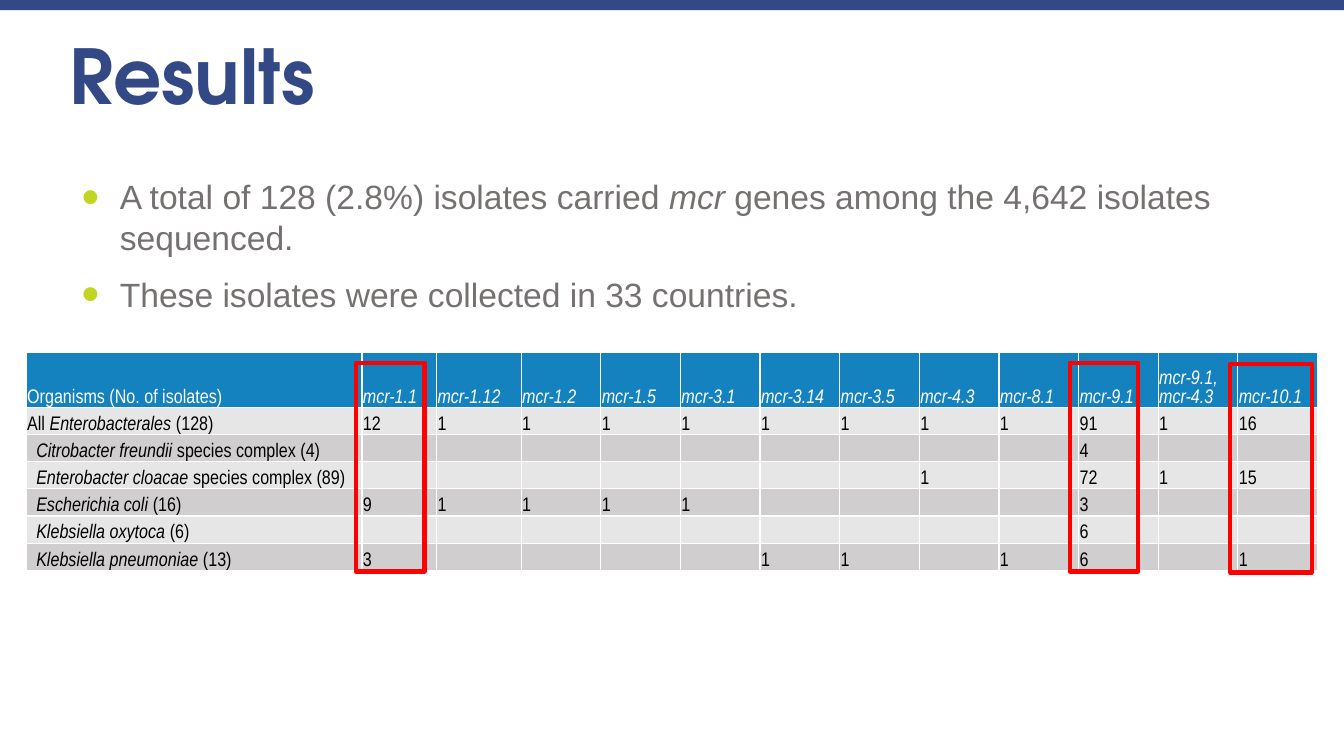
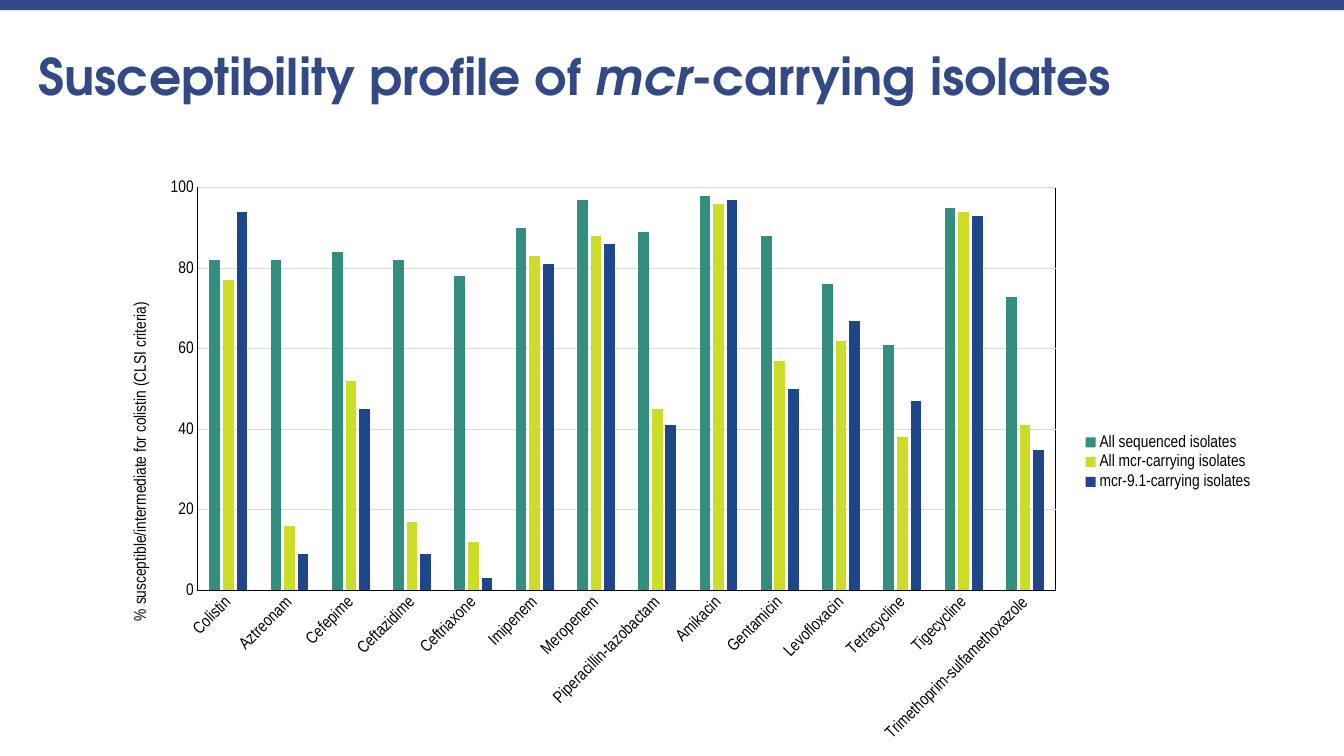
from lxml import etree
from pptx import Presentation
from pptx.chart.data import CategoryChartData
from pptx.dml.color import RGBColor
from pptx.enum.chart import XL_CHART_TYPE, XL_LEGEND_POSITION, XL_TICK_MARK
from pptx.enum.shapes import MSO_SHAPE
from pptx.enum.text import MSO_ANCHOR
from pptx.oxml import parse_xml
from pptx.oxml.ns import nsdecls, qn
from pptx.util import Inches, Pt

RECT = MSO_SHAPE.RECTANGLE
BOTTOM = MSO_ANCHOR.BOTTOM
COLUMN = XL_CHART_TYPE.COLUMN_CLUSTERED
RIGHT = XL_LEGEND_POSITION.RIGHT
NO_TICK = XL_TICK_MARK.NONE

NAVY = RGBColor(0x32, 0x49, 0x86)
BLUE = RGBColor(0x14, 0x82, 0xBE)
WHITE = RGBColor(0xFF, 0xFF, 0xFF)
BLACK = RGBColor(0, 0, 0)
GRAY = RGBColor(0x76, 0x71, 0x71)
LIGHT = RGBColor(0xE7, 0xE6, 0xE6)
DARK = RGBColor(0xD0, 0xCE, 0xCE)
GRID = RGBColor(0xD9, 0xD9, 0xD9)
RED = RGBColor(0xFF, 0, 0)
LIME = RGBColor(0xC1, 0xD6, 0x20)
TEAL = RGBColor(0x34, 0x8E, 0x7D)
YELLOW = RGBColor(0xCD, 0xDD, 0x27)
ROYAL = RGBColor(0x1D, 0x47, 0x89)

HEAD = {"name": "TeX Gyre Adventor", "bold": True, "rgb": NAVY}
BODY = {"name": "Arial", "size": Pt(24), "rgb": GRAY}
CELL = {"name": "Arial Narrow", "size": Pt(14)}
LABEL = {"name": "Arial Narrow", "size": Pt(12), "bold": False, "rgb": BLACK}

POINTS = [
    "A total of 128 (2.8%) isolates carried *mcr* genes among the 4,642 isolates sequenced.",
    "These isolates were collected in 33 countries.",
]
WIDTHS = [3.33, 0.74, 0.84] + [0.79] * 10
GENES = ["1.1", "1.12", "1.2", "1.5", "3.1", "3.14", "3.5", "4.3", "8.1", "9.1",
         "9.1, mcr-4.3", "10.1"]
COUNTS = [
    ("All *Enterobacterales* (128)", "12 1 1 1 1 1 1 1 1 91 1 16"),
    ("*Citrobacter freundii* species complex (4)", "- - - - - - - - - 4 - -"),
    ("*Enterobacter cloacae* species complex (89)", "- - - - - - - 1 - 72 1 15"),
    ("*Escherichia coli* (16)", "9 1 1 1 1 - - - - 3 - -"),
    ("*Klebsiella oxytoca* (6)", "- - - - - - - - - 6 - -"),
    ("*Klebsiella pneumoniae* (13)", "3 - - - - 1 1 - 1 6 - 1"),
]
MARKS = [(3.53, 3.6, 0.68), (10.61, 3.6, 0.68), (12.2, 3.61, 0.81)]
DRUGS = ["Colistin", "Aztreonam", "Cefepime", "Ceftazidime", "Ceftriaxone", "Imipenem",
         "Meropenem", "Piperacillin-tazobactam", "Amikacin", "Gentamicin", "Levofloxacin",
         "Tetracycline", "Tigecycline", "Trimethoprim-sulfamethoxazole"]
SERIES = [
    ("All sequenced isolates", TEAL,
     [82, 82, 84, 82, 78, 90, 97, 89, 98, 88, 76, 61, 95, 73]),
    ("All mcr-carrying isolates", YELLOW,
     [77, 16, 52, 17, 12, 83, 88, 45, 96, 57, 62, 38, 94, 41]),
    ("mcr-9.1-carrying isolates", ROYAL,
     [94, 9, 45, 9, 3, 81, 86, 41, 97, 50, 67, 47, 93, 35]),
]


def style(item, form):
    """Set each format value on a font or other object."""
    for key, value in form.items():
        if key == "rgb":
            item.color.rgb = value
        else:
            setattr(item, key, value)


def inch(*box):
    """Turn numbers into lengths."""
    return [Inches(n) for n in box]


def write(para, text, form):
    """Add runs, with the parts between asterisks in italics."""
    for i, part in enumerate(text.split("*")):
        if part:
            run = para.add_run()
            run.text = part
            style(run.font, {**form, "italic": i % 2 == 1})


def add_rect(slide, box, fill=None, line=None):
    """Add a plain rectangle with a fill or an outline."""
    rect = slide.shapes.add_shape(RECT, *inch(*box))
    rect.shadow.inherit = False
    if fill is None:
        rect.fill.background()
    else:
        rect.fill.solid()
        rect.fill.fore_color.rgb = fill
    if line is None:
        rect.line.fill.background()
    else:
        style(rect.line, {"rgb": line, "width": Pt(3)})


def add_page(deck, title, box, size, wrap=True):
    """Add a slide with the top band and its title."""
    slide = deck.slides.add_slide(deck.slide_layouts[6])
    add_rect(slide, (0, 0, 13.33, 0.1), fill=NAVY)
    frame = slide.shapes.add_textbox(*inch(*box)).text_frame
    frame.word_wrap = wrap
    write(frame.paragraphs[0], title, {**HEAD, "size": Pt(size)})
    return slide


def add_points(slide, box):
    """Add the bulleted list."""
    frame = slide.shapes.add_textbox(*inch(*box)).text_frame
    frame.word_wrap = True
    for i, text in enumerate(POINTS):
        para = frame.add_paragraph() if i else frame.paragraphs[0]
        style(para, {"space_before": Pt(6), "space_after": Pt(6)})
        props = para._p.get_or_add_pPr()
        props.set("marL", str(Inches(0.5)))
        props.set("indent", str(Inches(-0.38)))
        tint = etree.SubElement(props, qn("a:buClr"))
        etree.SubElement(tint, qn("a:srgbClr"), val=str(LIME))
        etree.SubElement(props, qn("a:buSzPct"), val="151000")
        etree.SubElement(props, qn("a:buFont"), typeface="Arial")
        etree.SubElement(props, qn("a:buChar"), char="•")
        write(para, text, BODY)


def fill_cell(cell, text, fill, tone, inset=0.01):
    """Write one table cell with white borders."""
    style(cell, {"margin_left": Inches(inset), "margin_right": Inches(0.01),
                 "margin_top": Inches(0.01), "margin_bottom": 0,
                 "vertical_anchor": BOTTOM})
    props = cell._tc.get_or_add_tcPr()
    for side in ("lnL", "lnR", "lnT", "lnB"):
        edge = etree.SubElement(props, qn("a:" + side), w=str(Pt(1)))
        paint = etree.SubElement(edge, qn("a:solidFill"))
        etree.SubElement(paint, qn("a:srgbClr"), val=str(WHITE))
    cell.fill.solid()
    cell.fill.fore_color.rgb = fill
    para = cell.text_frame.paragraphs[0]
    write(para, text, {**CELL, "rgb": tone})
    if not text:
        etree.SubElement(para._p, qn("a:endParaRPr"), sz="1400")


def add_counts(slide, left, top):
    """Add the table of isolates by gene."""
    size = inch(left, top, sum(WIDTHS), 2.17)
    table = slide.shapes.add_table(len(COUNTS) + 1, len(WIDTHS), *size).table
    style(table, {"first_row": False, "horz_banding": False})
    for col, width in zip(table.columns, WIDTHS):
        col.width = Inches(width)
    for i, row in enumerate(table.rows):
        row.height = Inches(0.27 if i else 0.54)
    heads = ["Organisms (No. of isolates)"] + [f"*mcr-{gene}*" for gene in GENES]
    for cell, text in zip(table.rows[0].cells, heads):
        fill_cell(cell, text, BLUE, WHITE)
    for i, (name, nums) in enumerate(COUNTS):
        texts = [name] + nums.replace("-", "").split(" ")
        for j, text in enumerate(texts):
            inset = 0.1 if i and not j else 0.01
            fill_cell(table.cell(i + 1, j), text, DARK if i % 2 else LIGHT, BLACK, inset)


def lay_out(x, y, w=None, h=None):
    """Make a manual layout in shares of the chart."""
    spot = {"xMode": "edge", "yMode": "edge", "x": x, "y": y}
    if w:
        spot = {"layoutTarget": "inner", **spot, "w": w, "h": h}
    tags = "".join(f'<c:{key} val="{value}"/>' for key, value in spot.items())
    return parse_xml(f"<c:layout {nsdecls('c')}><c:manualLayout>{tags}"
                     "</c:manualLayout></c:layout>")


def place(node, layout):
    """Replace the layout of a chart part."""
    for old in node.findall(qn("c:layout")):
        node.remove(old)
    text = node.find(qn("c:tx"))
    node.insert(0 if text is None else 1, layout)


def add_bars(slide, box):
    """Add the clustered column chart."""
    data = CategoryChartData()
    data.categories = DRUGS
    for name, _, nums in SERIES:
        data.add_series(name, nums)
    chart = slide.shapes.add_chart(COLUMN, *inch(*box), data).chart
    style(chart, {"has_title": False, "has_legend": True})
    style(chart.font, LABEL)
    style(chart.legend, {"position": RIGHT, "include_in_layout": False})
    style(chart.legend.font, LABEL)
    plot = chart.plots[0]
    style(plot, {"gap_width": 219, "overlap": -27, "vary_by_categories": False})
    for series, (_, tint, _) in zip(plot.series, SERIES):
        series.format.fill.solid()
        series.format.fill.fore_color.rgb = tint
    cats, vals = chart.category_axis, chart.value_axis
    for axis in (cats, vals):
        style(axis, {"major_tick_mark": NO_TICK, "minor_tick_mark": NO_TICK})
        style(axis.tick_labels.font, LABEL)
    style(cats.format.line, {"rgb": BLACK, "width": Pt(0.75)})
    cats._element.find(qn("c:txPr")).find(qn("a:bodyPr")).set("rot", "-2700000")
    style(vals, {"minimum_scale": 0, "maximum_scale": 100, "major_unit": 20,
                 "has_major_gridlines": True})
    style(vals.major_gridlines.format.line, {"rgb": GRID, "width": Pt(0.75)})
    vals.format.line.fill.background()
    frame = vals.axis_title.text_frame
    write(frame.paragraphs[0], "% susceptible/intermediate for colistin (CLSI criteria)", LABEL)
    frame._txBody.find(qn("a:bodyPr")).set("rot", "-5400000")
    place(vals.axis_title._element, lay_out(0.02, 0.22))
    area = chart._chartSpace.chart.plotArea
    place(area, lay_out(0.08, 0.03, 0.74, 0.69))
    area.append(parse_xml(
        f"<c:spPr {nsdecls('c', 'a')}><a:noFill/><a:ln w='{Pt(0.75)}'><a:solidFill>"
        f"<a:srgbClr val='{BLACK}'/></a:solidFill></a:ln></c:spPr>"))


def show_results(deck):
    """Build the slide with the results table."""
    slide = add_page(deck, "Results", (0.59, 0.24, 2.66, 1.01), 54, False)
    add_counts(slide, 0.26, 3.5)
    for left, top, width in MARKS:
        add_rect(slide, (left, top, width, 2.07), line=RED)
    add_points(slide, (0.59, 1.7, 11.69, 1.48))


def show_profile(deck):
    """Build the slide with the susceptibility chart."""
    title = "Susceptibility profile of *mcr*-carrying isolates"
    slide = add_page(deck, title, (0.28, 0.4, 12.97, 0.71), 36)
    add_bars(slide, (1.04, 1.69, 11.5, 5.79))


def main():
    """Build and save the deck."""
    deck = Presentation()
    style(deck, {"slide_width": Inches(13.33), "slide_height": Inches(7.5)})
    show_results(deck)
    show_profile(deck)
    deck.save("out.pptx")


if __name__ == "__main__":
    main()
